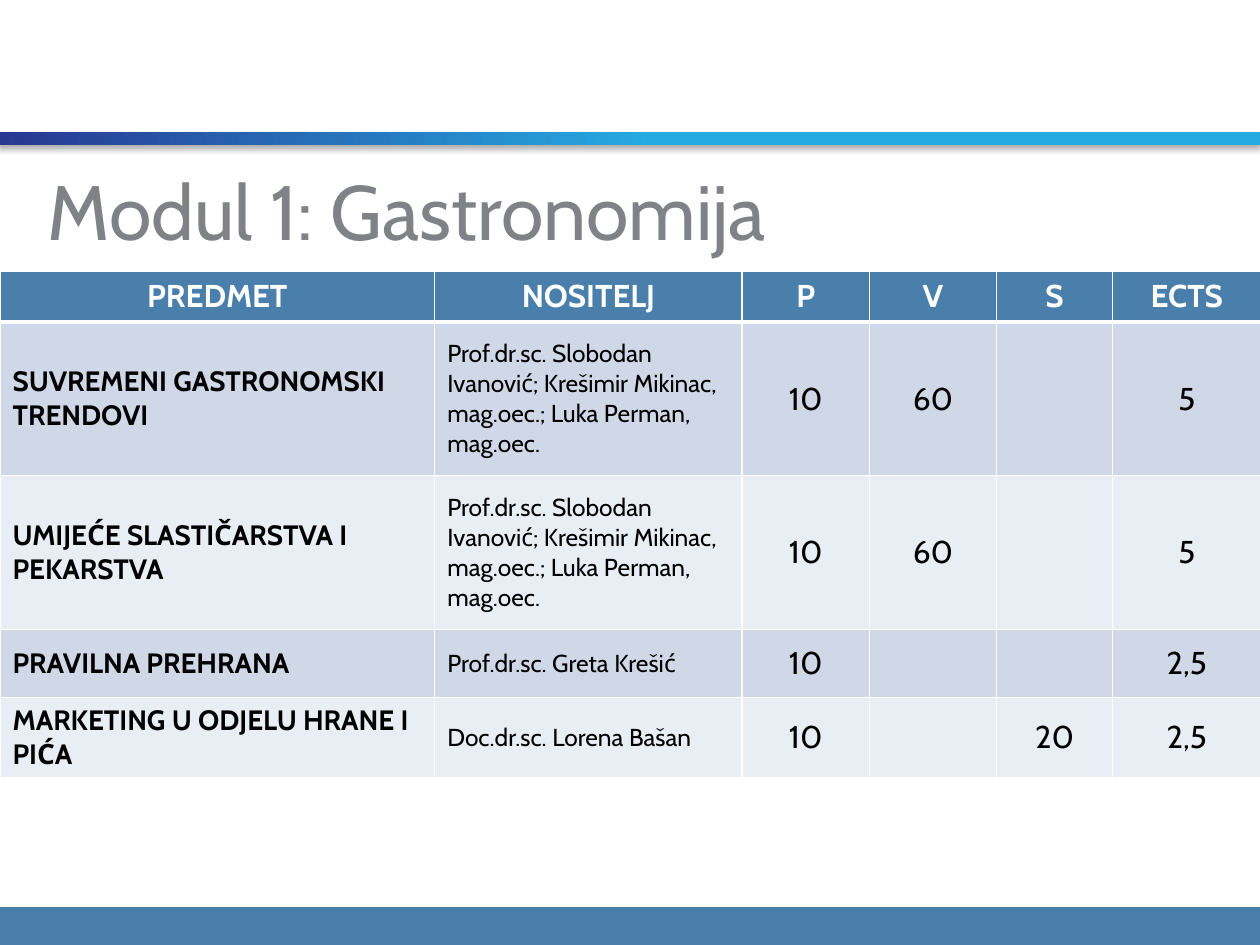
"""Build the slide that lists the courses of the gastronomy module."""
from lxml.etree import SubElement
from pptx import Presentation
from pptx.dml.color import RGBColor
from pptx.enum.shapes import MSO_SHAPE
from pptx.enum.text import MSO_ANCHOR, PP_ALIGN
from pptx.oxml import parse_xml
from pptx.oxml.ns import nsdecls, qn
from pptx.util import Inches, Pt

TITLE = "Modul 1: Gastronomija"
CHEFS = "Prof.dr.sc. Slobodan Ivanović; Krešimir Mikinac, mag.oec.; Luka Perman, mag.oec."
HEADER = ("PREDMET", "NOSITELJ", "P", "V", "S", "ECTS")
COURSES = [
    ("SUVREMENI GASTRONOMSKI TRENDOVI", CHEFS, "10", "60", "", "5"),
    ("UMIJEĆE SLASTIČARSTVA I PEKARSTVA", CHEFS, "10", "60", "", "5"),
    ("PRAVILNA PREHRANA", "Prof.dr.sc. Greta Krešić", "10", "", "", "2,5"),
    ("MARKETING U ODJELU HRANE I PIĆA", "Doc.dr.sc. Lorena Bašan", "10", "", "20", "2,5"),
]
COLUMN_WIDTHS = (3.45, 2.44, 1.01, 1.01, 0.92, 1.18)
ROW_HEIGHTS = (0.4, 1.22, 1.22, 0.54, 0.64)
TITLE_BOX = (0.28, 1.23, 9.45, 0.87)
TABLE_BOX = (0, 2.15, 10, 4.02)
FOOTER_BOX = (-0.02, 7.2, 10.03, 0.3)
STRIPE_BOX = (-0.02, 1.05, 10.02, 0.1)

THEME = {
    "font": "Cabin",
    "title": "818285", "text": "000000", "white": "FFFFFF",
    "blue": "4A7FAC", "bands": ("D0D8E8", "E9EDF4"),
    "gradient": ((0, "283891"), (0.52, "25AAE1")),
    "title_size": 44, "large": 18, "course_size": 16, "teacher_size": 14,
    "line": 1, "header_line": 3,
}


def color(name):
    return RGBColor.from_string(THEME.get(name, name))


def inches(values):
    return [Inches(value) for value in values]


def add_span(para, text, size, fill, bold=False):
    span = para.add_run()
    span.text = text
    span.font.name = THEME["font"]
    span.font.size = Pt(size)
    span.font.bold = bold
    span.font.color.rgb = color(fill)


def add_bar(page, place):
    bar = page.shapes.add_shape(MSO_SHAPE.RECTANGLE, *inches(place))
    bar.line.fill.background()
    bar.shadow.inherit = False
    effects = bar.element.spPr.find(qn("a:effectLst"))
    shadow = SubElement(effects, qn("a:outerShdw"), blurRad=str(Pt(3.5)),
                        dist=str(Pt(2.2)), dir="5400000", rotWithShape="0")
    tone = SubElement(shadow, qn("a:srgbClr"), val=THEME["text"])
    SubElement(tone, qn("a:alpha"), val="32000")
    return bar


def add_borders(cell, row):
    widths = {"L": THEME["line"], "R": THEME["line"],
              "T": THEME["header_line" if row == 1 else "line"],
              "B": THEME["header_line" if row == 0 else "line"]}
    properties = cell._tc.get_or_add_tcPr()
    for place, (side, width) in enumerate(widths.items()):
        properties.insert(place, parse_xml(
            f'<a:ln{side} {nsdecls("a")} w="{Pt(width)}"><a:solidFill>'
            f'<a:srgbClr val="{THEME["white"]}"/></a:solidFill></a:ln{side}>'))


def fill_cell(cell, text, row, column):
    is_header = row == 0
    fill = "blue" if is_header else THEME["bands"][(row - 1) % 2]
    cell.fill.solid()
    cell.fill.fore_color.rgb = color(fill)
    cell.vertical_anchor = MSO_ANCHOR.TOP if is_header else MSO_ANCHOR.MIDDLE
    add_borders(cell, row)
    para = cell.text_frame.paragraphs[0]
    para.alignment = PP_ALIGN.CENTER if is_header or column > 1 else PP_ALIGN.LEFT
    if not text:
        para.font.size = Pt(THEME["large"])
        return
    sizes = {} if is_header else {0: THEME["course_size"], 1: THEME["teacher_size"]}
    add_span(para, text, sizes.get(column, THEME["large"]),
             "white" if is_header else "text", is_header or column == 0)


def add_course_table(page):
    rows = [HEADER, *COURSES]
    table = page.shapes.add_table(len(rows), len(HEADER), *inches(TABLE_BOX)).table
    for column, width in zip(table.columns, COLUMN_WIDTHS):
        column.width = Inches(width)
    for row, height in zip(table.rows, ROW_HEIGHTS):
        row.height = Inches(height)
    for row, texts in enumerate(rows):
        for column, text in enumerate(texts):
            fill_cell(table.cell(row, column), text, row, column)


def add_title(page):
    box = page.shapes.title
    box.left, box.top, box.width, box.height = inches(TITLE_BOX)
    box.text_frame.vertical_anchor = MSO_ANCHOR.MIDDLE
    para = box.text_frame.paragraphs[0]
    para.alignment = PP_ALIGN.LEFT
    add_span(para, TITLE, THEME["title_size"], "title")


def main():
    deck = Presentation()
    deck.slide_width, deck.slide_height = Inches(10), Inches(7.5)
    page = deck.slides.add_slide(deck.slide_layouts[5])
    footer = add_bar(page, FOOTER_BOX)
    footer.fill.solid()
    footer.fill.fore_color.rgb = color("blue")
    stripe = add_bar(page, STRIPE_BOX)
    stripe.fill.gradient()
    stripe.fill.gradient_angle = 0
    for stop, (position, tone) in zip(stripe.fill.gradient_stops, THEME["gradient"]):
        stop.position = position
        stop.color.rgb = color(tone)
    add_title(page)
    add_course_table(page)
    deck.save("out.pptx")


if __name__ == "__main__":
    main()
